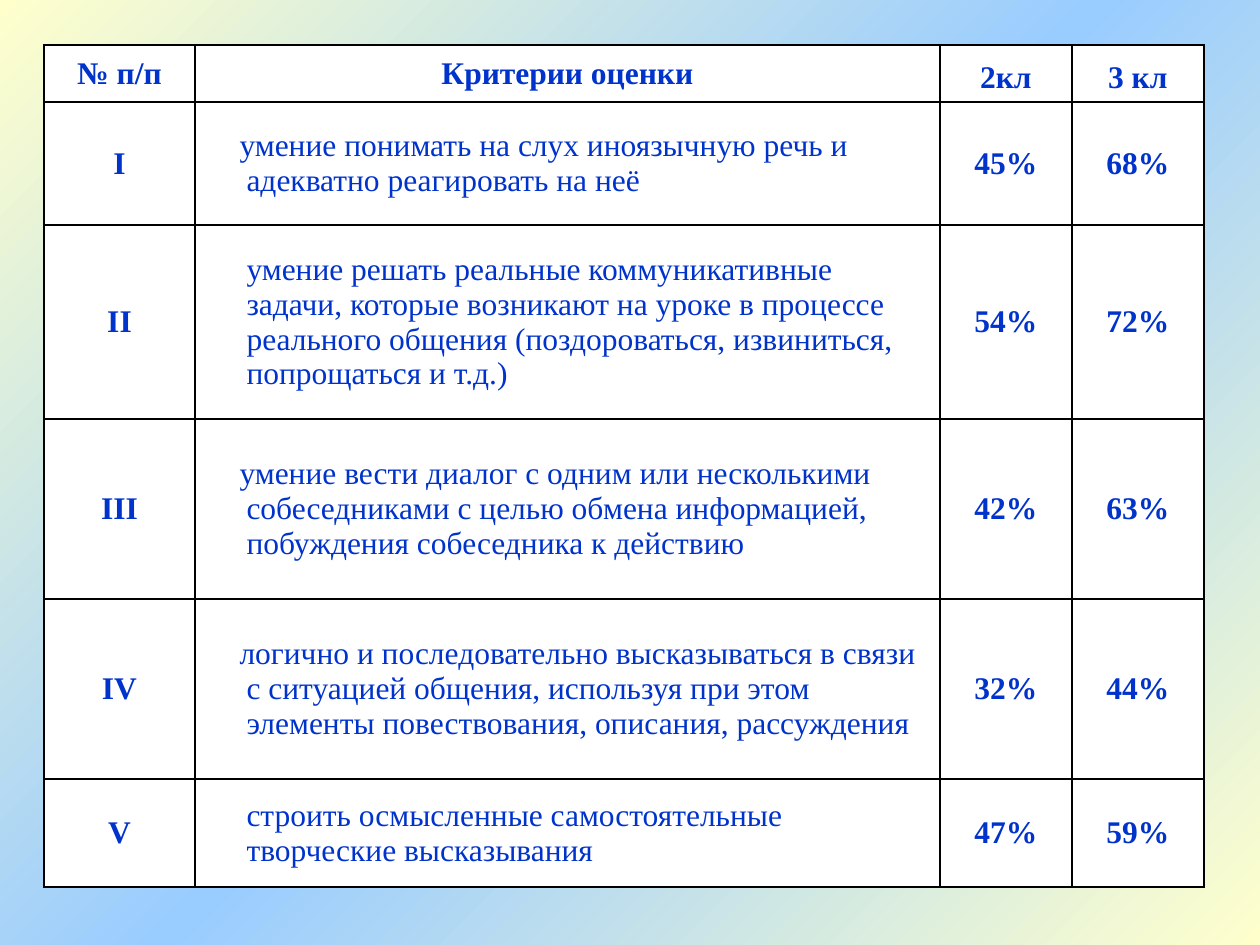
from copy import deepcopy

from lxml import etree
from pptx import Presentation
from pptx.dml.color import RGBColor
from pptx.enum.text import MSO_ANCHOR, PP_ALIGN
from pptx.oxml.ns import qn
from pptx.util import Pt

EMU_PER_PX = 914400 / 126
CENTER, LEFT = PP_ALIGN.CENTER, PP_ALIGN.LEFT
MIDDLE, BOTTOM = MSO_ANCHOR.MIDDLE, MSO_ANCHOR.BOTTOM
FONT = "Times New Roman"
COLORS = {"text": "0033CC", "cell": "FFFFFF", "border": "000000",
          "edge": "FFFFCC", "middle": "99CCFF"}

TABLE_BOX = (44, 45)
COLUMN_WIDTHS = [151, 745, 132, 132]
ROW_HEIGHTS = [57, 123, 194, 180, 180, 108]
TEXT_MARGIN = 39
HANGING = -7

HEADER = ["№ п/п", "Критерии оценки", "2кл", "3 кл"]
# Number, criterion, first-line indent, second grade, third grade
CRITERIA = [
    ("I", "умение понимать на слух иноязычную речь и адекватно реагировать на неё",
     HANGING, "45%", "68%"),
    ("II", "умение решать реальные коммуникативные задачи, которые возникают на уроке "
     "в процессе реального общения (поздороваться, извиниться, попрощаться и т.д.)",
     0, "54%", "72%"),
    ("III", "умение вести диалог с одним или несколькими собеседниками с целью обмена "
     "информацией, побуждения собеседника к действию", HANGING, "42%", "63%"),
    ("IV", "логично и последовательно высказываться в связи с ситуацией общения, "
     "используя при этом элементы повествования, описания, рассуждения",
     HANGING, "32%", "44%"),
    ("V", "строить осмысленные самостоятельные творческие высказывания",
     0, "47%", "59%"),
]


def px(length):
    return round(length * EMU_PER_PX)


def color(name):
    return RGBColor.from_string(COLORS[name])


def paint_background(slide):
    fill = slide.background.fill
    fill.gradient()
    fill.gradient_angle = 315
    first, second = fill.gradient_stops
    first.color.rgb, first.position = color("edge"), 0
    second.color.rgb, second.position = color("middle"), 0.5
    # The last stop repeats the first
    stops = slide.background._cSld.find(".//" + qn("a:gsLst"))
    last = deepcopy(stops[0])
    last.set("pos", "100000")
    stops.append(last)


def add_borders(cell):
    properties = cell._tc.get_or_add_tcPr()
    for position, side in enumerate(("lnL", "lnR", "lnT", "lnB")):
        line = etree.Element(qn("a:" + side), w=str(Pt(1)))
        solid = etree.SubElement(line, qn("a:solidFill"))
        etree.SubElement(solid, qn("a:srgbClr"), val=COLORS["border"])
        properties.insert(position, line)


def write_cell(cell, text, bold=True, align=CENTER, anchor=MIDDLE, margin=0, indent=0):
    cell.fill.solid()
    cell.fill.fore_color.rgb = color("cell")
    add_borders(cell)
    cell.vertical_anchor = anchor
    paragraph = cell.text_frame.paragraphs[0]
    paragraph.alignment = align
    properties = paragraph._p.get_or_add_pPr()
    properties.set("marL", str(px(margin)))
    properties.set("indent", str(px(indent)))
    run = paragraph.add_run()
    run.text = text
    run.font.name, run.font.size, run.font.bold = FONT, Pt(18), bold
    run.font.color.rgb = color("text")


def add_criteria_table(slide, left, top):
    frame = slide.shapes.add_table(
        len(ROW_HEIGHTS), len(COLUMN_WIDTHS), px(left), px(top),
        px(sum(COLUMN_WIDTHS)), px(sum(ROW_HEIGHTS)))
    table = frame.table
    table.first_row = table.horz_banding = False
    for column, width in zip(table.columns, COLUMN_WIDTHS):
        column.width = px(width)
    for row, height in zip(table.rows, ROW_HEIGHTS):
        row.height = px(height)

    # Header row
    for column, text in enumerate(HEADER):
        write_cell(table.cell(0, column), text, anchor=MIDDLE if column < 2 else BOTTOM)

    # Criteria with their results
    for row, (number, criterion, indent, second, third) in enumerate(CRITERIA, 1):
        write_cell(table.cell(row, 0), number)
        write_cell(table.cell(row, 1), criterion, bold=False, align=LEFT,
                   margin=TEXT_MARGIN, indent=indent)
        write_cell(table.cell(row, 2), second)
        write_cell(table.cell(row, 3), third)


def main():
    presentation = Presentation()
    presentation.slide_width, presentation.slide_height = px(1260), px(945)
    slide = presentation.slides.add_slide(presentation.slide_layouts[6])
    paint_background(slide)
    add_criteria_table(slide, *TABLE_BOX)
    presentation.save("out.pptx")


if __name__ == "__main__":
    main()
